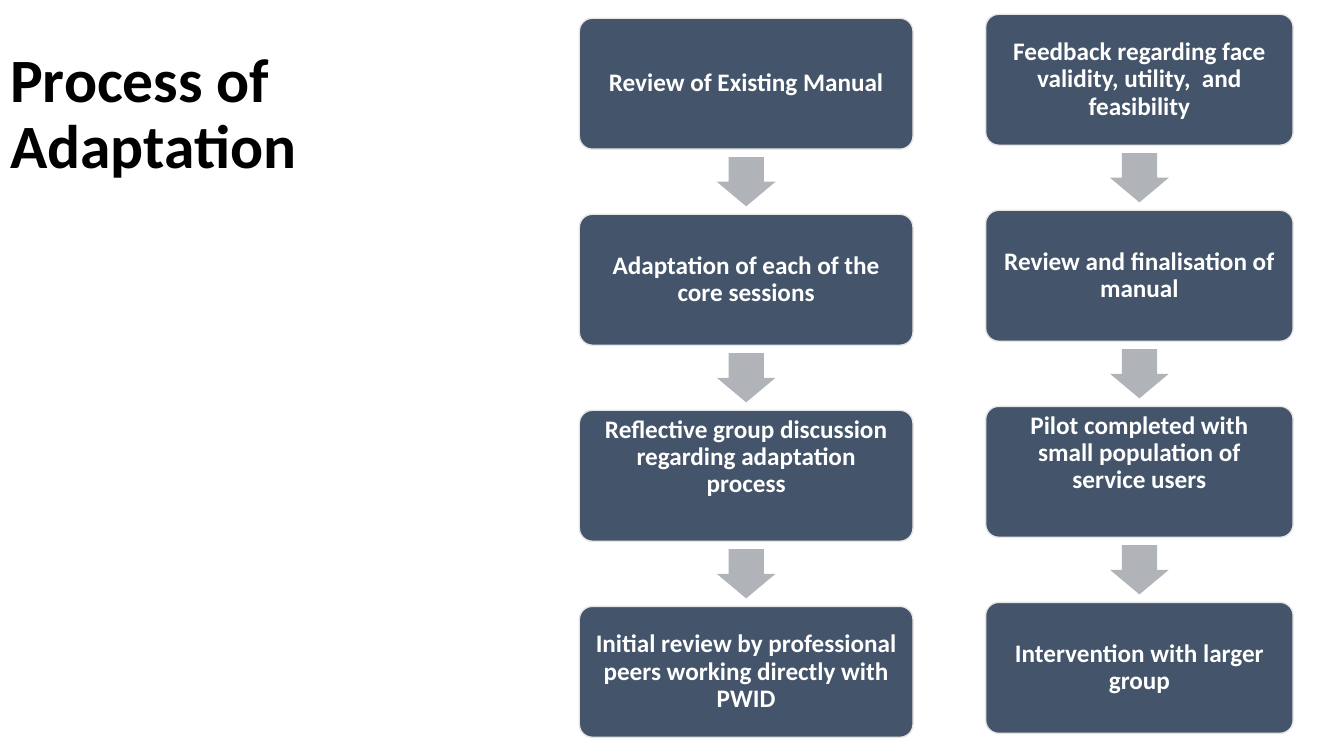
from dataclasses import dataclass

import pptx
import pptx.dml.color
import pptx.enum.shapes
import pptx.enum.text
import pptx.util

Cm = pptx.util.Cm
Pt = pptx.util.Pt
RGB = pptx.dml.color.RGBColor
SHAPE = pptx.enum.shapes.MSO_SHAPE
ALIGN = pptx.enum.text.PP_ALIGN
ANCHOR = pptx.enum.text.MSO_ANCHOR


@dataclass(frozen=True)
class Theme:
    font: str = "Calibri"
    title_size: int = 44
    step_size: int = 18
    title: RGB = RGB(0x00, 0x00, 0x00)
    step_text: RGB = RGB(0xFF, 0xFF, 0xFF)
    step_fill: RGB = RGB(0x44, 0x54, 0x6A)
    step_line: RGB = RGB(0xE7, 0xE6, 0xE6)
    arrow: RGB = RGB(0xB0, 0xB4, 0xB9)


@dataclass(frozen=True)
class Step:
    text: str
    lift: float = 0  # extra bottom inset, raises the centred text


@dataclass(frozen=True)
class Column:
    left: float
    top: float
    width: float
    steps: tuple[Step, ...]


THEME = Theme()

# Vertical rhythm of the flow, in centimetres
STEP_HEIGHT = 3.3
PITCH = 4.94
ARROW_WIDTH = 1.48
ARROW_HEIGHT = 1.24
INSET = 0.28
LIFT = 0.94

COLUMNS = (
    Column(14.6, 0.46, 8.41, (
        Step("Review of Existing Manual"),
        Step("Adaptation of each of the core sessions"),
        Step("Reflective group discussion regarding adaptation process", LIFT),
        Step("Initial review by professional peers working directly with PWID"),
    )),
    Column(24.84, 0.36, 7.75, (
        Step("Feedback regarding face validity, utility,  and feasibility"),
        Step("Review and finalisation of manual"),
        Step("Pilot completed with small population of service users", LIFT),
        Step("Intervention with larger group"),
    )),
)


def style_text(tf: pptx.text.text.TextFrame, size: int, color: RGB, align: ALIGN) -> None:
    tf.word_wrap = True
    tf.auto_size = pptx.enum.text.MSO_AUTO_SIZE.NONE
    tf.vertical_anchor = ANCHOR.MIDDLE
    for p in tf.paragraphs:
        p.alignment = align
        p.line_spacing = 0.9
        for r in p.runs:
            r.font.name = THEME.font
            r.font.size = Pt(size)
            r.font.bold = True
            r.font.color.rgb = color


def add_title(s: pptx.slide.Slide, text: str) -> None:
    sp = s.shapes.title
    sp.left, sp.top, sp.width, sp.height = Cm(0), Cm(0), Cm(29.21), Cm(5.82)
    sp.text_frame.text = text
    style_text(sp.text_frame, THEME.title_size, THEME.title, ALIGN.LEFT)


def add_step(s: pptx.slide.Slide, step: Step, left: float, top: float, width: float) -> None:
    sp = s.shapes.add_shape(
        SHAPE.ROUNDED_RECTANGLE, Cm(left), Cm(top), Cm(width), Cm(STEP_HEIGHT))
    sp.adjustments[0] = 0.1
    sp.shadow.inherit = False
    sp.fill.solid()
    sp.fill.fore_color.rgb = THEME.step_fill
    sp.line.color.rgb = THEME.step_line
    sp.line.width = Pt(1)
    tf = sp.text_frame
    tf.margin_left = tf.margin_right = tf.margin_top = Cm(INSET)
    tf.margin_bottom = Cm(INSET + step.lift)
    tf.text = step.text
    style_text(tf, THEME.step_size, THEME.step_text, ALIGN.CENTER)


def add_arrow(s: pptx.slide.Slide, center: float, top: float) -> None:
    sp = s.shapes.add_shape(
        SHAPE.DOWN_ARROW, Cm(center - ARROW_WIDTH / 2), Cm(top),
        Cm(ARROW_WIDTH), Cm(ARROW_HEIGHT))
    sp.adjustments[0] = 0.6
    sp.adjustments[1] = 0.5
    sp.shadow.inherit = False
    sp.fill.solid()
    sp.fill.fore_color.rgb = THEME.arrow
    sp.line.fill.background()


def add_column(s: pptx.slide.Slide, column: Column) -> None:
    arrow_gap = (PITCH - STEP_HEIGHT - ARROW_HEIGHT) / 2
    for i, step in enumerate(column.steps):
        top = column.top + i * PITCH
        if i:
            add_arrow(s, column.left + column.width / 2, top - arrow_gap - ARROW_HEIGHT)
        add_step(s, step, column.left, top, column.width)


def main() -> None:
    prs = pptx.Presentation()
    prs.slide_width, prs.slide_height = Cm(33.87), Cm(19.05)
    s = prs.slides.add_slide(prs.slide_layouts.get_by_name("Title Only"))

    # Heading
    add_title(s, "Process of\vAdaptation")

    # Two flows of steps
    for column in COLUMNS:
        add_column(s, column)

    prs.save("out.pptx")


if __name__ == "__main__":
    main()
